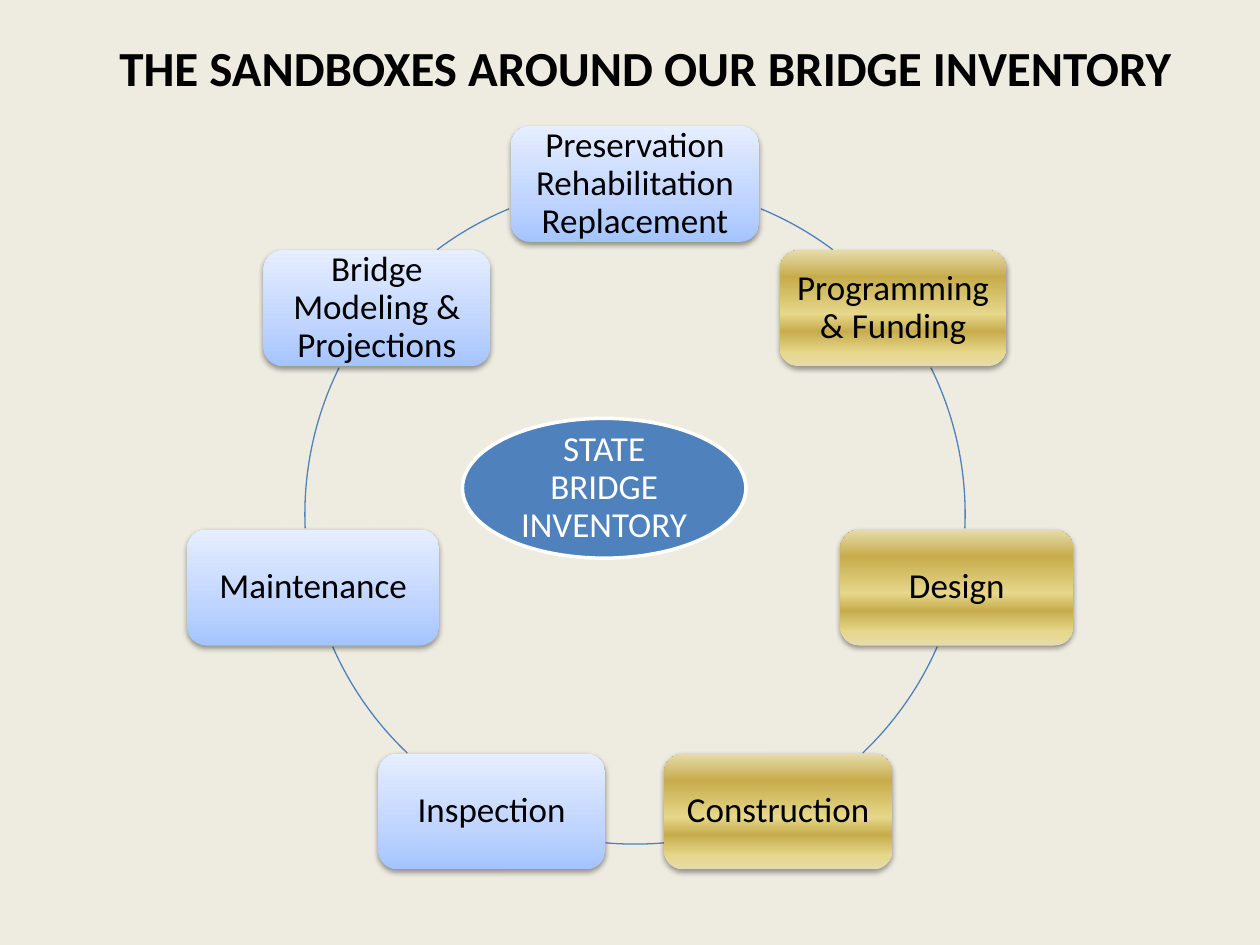
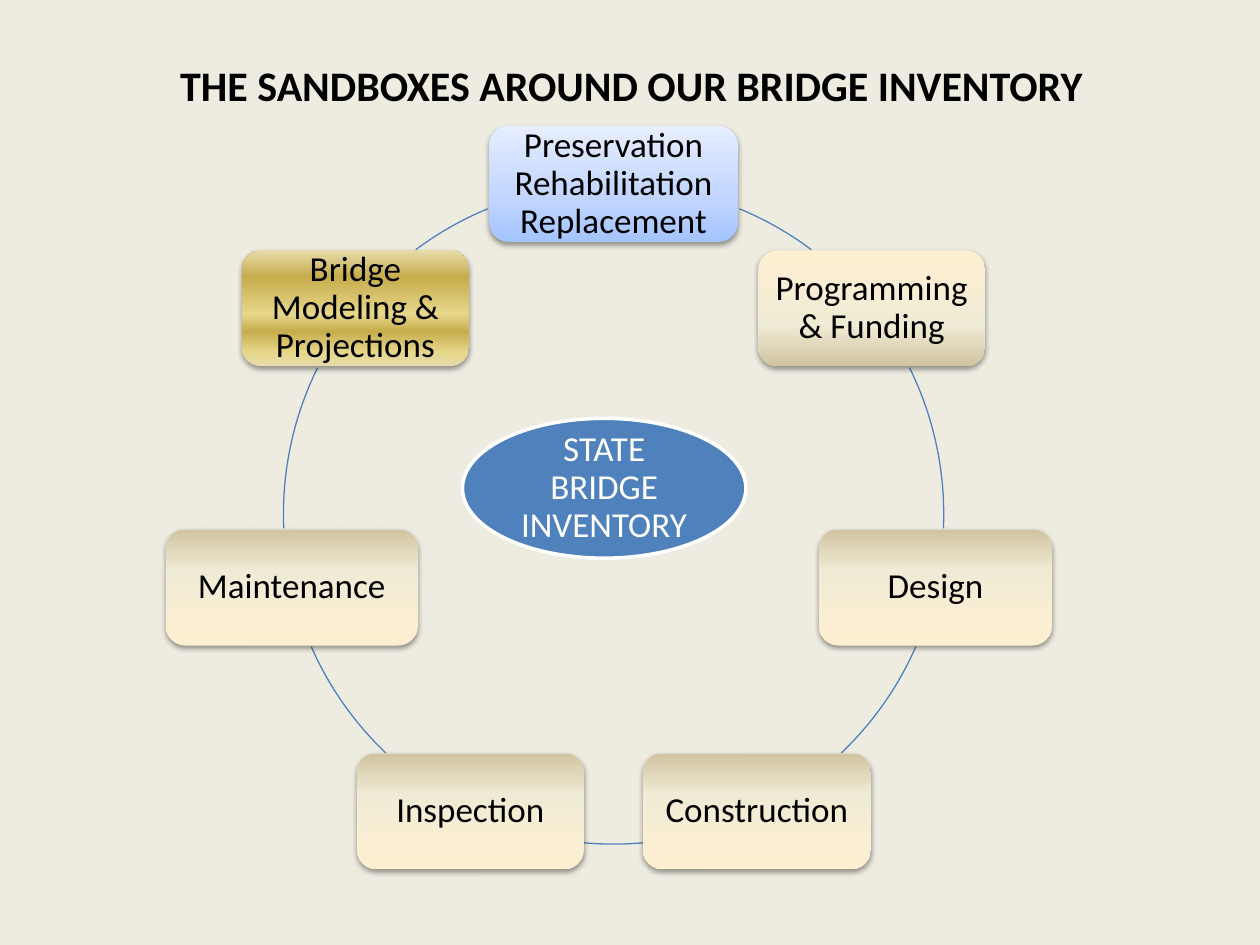
"""Build two slides showing the activities that ring a state bridge inventory."""
import math

from lxml import etree
from pptx import Presentation
from pptx import util as u
from pptx.dml.color import RGBColor
from pptx.enum import shapes, text
from pptx.oxml.ns import qn

FONT = "Calibri"
TITLE = "THE SANDBOXES AROUND OUR BRIDGE INVENTORY"
BLACK = RGBColor(0x00, 0x00, 0x00)
WHITE = RGBColor(0xFF, 0xFF, 0xFF)
CREAM = RGBColor(0xEE, 0xEC, 0xE1)
BLUE = RGBColor(0x4F, 0x81, 0xBD)
SKY_DEEP = RGBColor(0xA4, 0xC4, 0xFF)
SKY_MID = RGBColor(0xBF, 0xD4, 0xFF)
SKY_PALE = RGBColor(0xE6, 0xEE, 0xFF)
GOLD_PALE = RGBColor(0xE6, 0xDC, 0xAC)
GOLD_LIGHT = RGBColor(0xE6, 0xD7, 0x8A)
GOLD_DEEP = RGBColor(0xC7, 0xAC, 0x4C)
SAND_PALE = RGBColor(0xFF, 0xEF, 0xD1)
SAND_MID = RGBColor(0xF0, 0xEB, 0xD5)
SAND_DEEP = RGBColor(0xD1, 0xC3, 0x9F)

UPWARD, DOWNWARD = 90, 270
SKY = ([(0, SKY_DEEP), (35, SKY_MID), (100, SKY_PALE)], UPWARD)
GOLD = ([(0, GOLD_PALE), (12, GOLD_LIGHT), (30, GOLD_DEEP),
         (45, GOLD_LIGHT), (77, GOLD_DEEP), (100, GOLD_PALE)], UPWARD)
SAND_STOPS = [(0, SAND_PALE), (65, SAND_MID), (100, SAND_DEEP)]
SAND = (SAND_STOPS, UPWARD)
SAND_FLIPPED = (SAND_STOPS, DOWNWARD)

ACTIVITIES = [
    ("Preservation Rehabilitation Replacement", 1.97),
    ("Programming & Funding", 1.8),
    ("Design", 1.85),
    ("Construction", 1.81),
    ("Inspection", 1.8),
    ("Maintenance", 2),
    ("Bridge Modeling & Projections", 1.8),
]
BOX_HEIGHT = 0.92
RING_RADIUS = 2.62
RING_MIDDLE = 4.08
RIGHT_ARCS = [(292.4, 306.8), (333.7, 2.5), (23.7, 46.4)]
BOTTOM_ARC = (84.9, 95.1)
LEFT_ARCS = [((180 - end) % 360, (180 - start) % 360) for start, end in RIGHT_ARCS]


def add_title(page, left, top, width, height, size, align):
    """Place and format the slide title."""
    title = page.shapes.title
    title.left, title.top = u.Inches(left), u.Inches(top)
    title.width, title.height = u.Inches(width), u.Inches(height)
    frame = title.text_frame
    frame.text = TITLE
    frame.word_wrap = False
    frame.auto_size = text.MSO_AUTO_SIZE.SHAPE_TO_FIT_TEXT
    frame.vertical_anchor = text.MSO_ANCHOR.TOP
    para = frame.paragraphs[0]
    para.alignment = align
    para.font.name, para.font.size, para.font.bold = FONT, u.Pt(size), True
    para.font.color.rgb = BLACK


def add_shape(page, kind, left, top, width, height):
    """Add a preset shape without the theme shadow."""
    shape = page.shapes.add_shape(kind, u.Inches(left), u.Inches(top),
                                  u.Inches(width), u.Inches(height))
    shape.shadow.inherit = False
    return shape


def write_label(shape, label, color, inset):
    """Write centred text inside a shape."""
    frame = shape.text_frame
    frame.text = label
    frame.word_wrap = True
    frame.vertical_anchor = text.MSO_ANCHOR.MIDDLE
    frame.margin_left = frame.margin_right = u.Inches(inset)
    frame.margin_top = frame.margin_bottom = u.Inches(inset)
    para = frame.paragraphs[0]
    para.alignment = text.PP_ALIGN.CENTER
    para.line_spacing = 0.9
    para.font.name, para.font.size = FONT, u.Pt(20)
    para.font.color.rgb = color


def add_color(parent, color):
    """Append an RGB colour element and return it."""
    return etree.SubElement(parent, qn("a:srgbClr"), val=str(color))


def fill_gradient(shape, stops, angle):
    """Fill a shape with a linear gradient of any number of stops."""
    shape.fill.gradient()
    shape.fill.gradient_angle = angle
    stop_list = shape._element.spPr.find(qn("a:gradFill")).find(qn("a:gsLst"))
    for old_stop in list(stop_list):
        stop_list.remove(old_stop)
    for percent, color in stops:
        stop = etree.SubElement(stop_list, qn("a:gs"), pos=str(percent * 1000))
        add_color(stop, color)


def drop_shadow(shape):
    """Give a shape a soft shadow straight below it."""
    effects = shape._element.spPr.find(qn("a:effectLst"))
    shadow = etree.SubElement(effects, qn("a:outerShdw"), blurRad="40000",
                              dist="20000", dir="5400000", rotWithShape="0")
    etree.SubElement(add_color(shadow, BLACK), qn("a:alpha"), val="38000")


def add_activity(page, center_x, center_y, width, label, gradient):
    """Add one rounded activity box around its centre."""
    box = add_shape(page, shapes.MSO_SHAPE.ROUNDED_RECTANGLE, center_x - width / 2,
                    center_y - BOX_HEIGHT / 2, width, BOX_HEIGHT)
    fill_gradient(box, *gradient)
    box.line.fill.background()
    drop_shadow(box)
    write_label(box, label, BLACK, 0.07)


def add_arc(page, middle_x, start, end):
    """Add the part of the ring between two clockwise angles in degrees."""
    arc = add_shape(page, shapes.MSO_SHAPE.ARC, middle_x - RING_RADIUS,
                    RING_MIDDLE - RING_RADIUS, 2 * RING_RADIUS, 2 * RING_RADIUS)
    arc.adjustments[0], arc.adjustments[1] = start * 0.6, end * 0.6
    arc.fill.background()
    arc.line.color.rgb = BLUE
    arc.line.width = u.Pt(0.75)


def add_ring(page, middle_x, gradients):
    """Spread the activities evenly round the ring and join them with arcs."""
    for start, end in [*RIGHT_ARCS, BOTTOM_ARC, *LEFT_ARCS]:
        add_arc(page, middle_x, start, end)
    for index, ((label, width), gradient) in enumerate(zip(ACTIVITIES, gradients)):
        angle = 2 * math.pi * index / len(ACTIVITIES)
        add_activity(page, middle_x + RING_RADIUS * math.sin(angle),
                     RING_MIDDLE - RING_RADIUS * math.cos(angle),
                     width, label, gradient)


def add_inventory(page):
    """Add the central inventory ellipse."""
    ellipse = add_shape(page, shapes.MSO_SHAPE.OVAL, 3.67, 3.32, 2.25, 1.11)
    ellipse.fill.solid()
    ellipse.fill.fore_color.rgb = BLUE
    ellipse.line.color.rgb = WHITE
    ellipse.line.width = u.Pt(2)
    write_label(ellipse, "STATE BRIDGE INVENTORY", WHITE, 0.03)


def add_page(deck, middle_x, gradients, title_place):
    """Add one slide with its title, ring and centre."""
    page = deck.slides.add_slide(deck.slide_layouts.get_by_name("Title Only"))
    add_title(page, *title_place)
    add_ring(page, middle_x, gradients)
    add_inventory(page)


def main():
    """Build and save the deck."""
    deck = Presentation()
    deck.slide_width, deck.slide_height = u.Inches(10), u.Inches(7.5)
    background = deck.slide_master.background.fill
    background.solid()
    background.fore_color.rgb = CREAM
    add_page(deck, 5.04, [SKY] + [GOLD] * 3 + [SKY] * 3,
             (0.83, 0.25, 8.58, 0.57, 28, text.PP_ALIGN.CENTER))
    add_page(deck, 4.87, [SKY, SAND_FLIPPED] + [SAND] * 4 + [GOLD],
             (1.33, 0.42, 7.42, 0.5, 24, text.PP_ALIGN.LEFT))
    deck.save("out.pptx")


if __name__ == "__main__":
    main()
